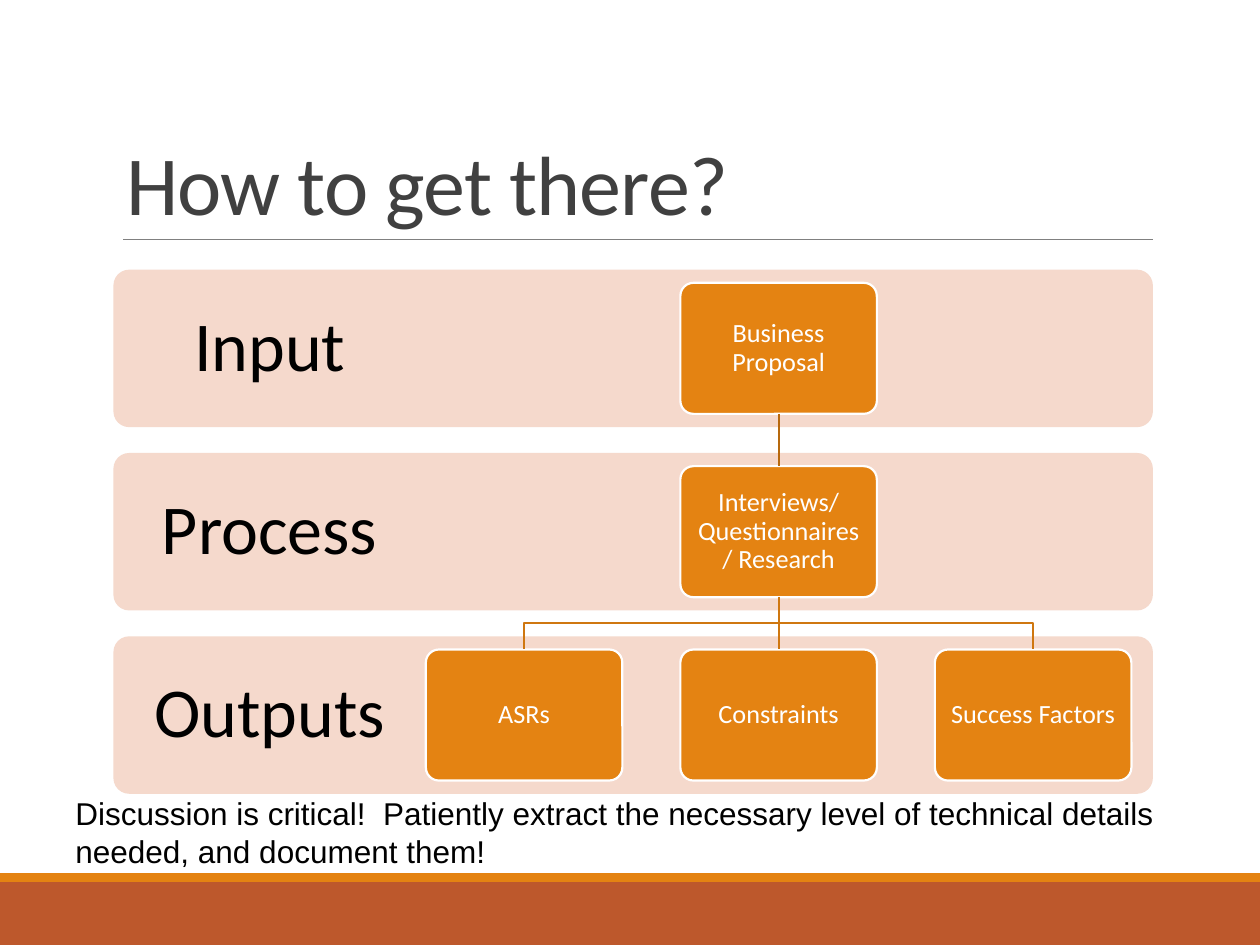
from lxml.etree import SubElement
from pptx import Presentation
from pptx.dml.color import RGBColor
from pptx.enum.shapes import MSO_CONNECTOR, MSO_SHAPE
from pptx.enum.text import MSO_ANCHOR, MSO_AUTO_SIZE, PP_ALIGN
from pptx.oxml.ns import qn
from pptx.util import Inches, Pt

THEME = {
    "rust": "BD582C", "orange": "E48312", "rule": "808080", "band": "F5D9CC",
    "white": "FFFFFF", "upper_link": "B7690E", "lower_link": "CF7710",
    "link_width": 1.25, "rule_width": 0.5,
    "title": {"size": 48, "name": "Calibri", "color": "404040"},
    "label": {"size": 40, "name": "Calibri", "color": "000000"},
    "node": {"size": 15, "name": "Calibri", "color": "FFFFFF"},
    "remark": {"size": 18, "name": "Arial", "color": "000000"},
}


def write(shape, text, look, inset, anchor, align, spacing):
    frame = shape.text_frame
    frame.text = text
    frame_format = {"word_wrap": True, "auto_size": MSO_AUTO_SIZE.NONE, "vertical_anchor": anchor}
    for side in ("left", "right", "top", "bottom"):
        frame_format["margin_" + side] = Inches(inset if side in ("left", "right") else min(inset, 0.05))
    for name, value in frame_format.items():
        setattr(frame, name, value)
    paragraph = frame.paragraphs[0]
    for name, value in {"alignment": align, "line_spacing": spacing}.items():
        setattr(paragraph, name, value)
    font = paragraph.runs[0].font
    for name, value in {"size": Pt(look["size"]), "name": look["name"]}.items():
        setattr(font, name, value)
    font.color.rgb = RGBColor.from_string(look["color"])


def paint(shape, fill=None, line=None, width=THEME["link_width"]):
    shape.shadow.inherit = False
    if fill:
        shape.fill.solid()
        shape.fill.fore_color.rgb = RGBColor.from_string(fill)
    else:
        shape.fill.background()
    if line:
        shape.line.color.rgb = RGBColor.from_string(line)
        shape.line.width = Pt(width)
    else:
        shape.line.fill.background()


deck = Presentation()
deck.slide_width, deck.slide_height = Inches(10), Inches(7.5)
slide = deck.slides.add_slide(deck.slide_layouts[5])
shapes = slide.shapes

left, band_width, band_height = 0.9, 8.25, 1.25
first_row, row_pitch = 2.14, (5.05 - 2.14) / 2
first_column, column_pitch = 3.38, 2.02
node_width, node_height = 1.56, 1.04
node_gap = (band_height - node_height) / 2

for top, height, color in ((7, 0.5, "rust"), (6.93, 0.07, "orange")):
    stripe = shapes.add_shape(MSO_SHAPE.RECTANGLE, 0, Inches(top), deck.slide_width, Inches(height))
    paint(stripe, THEME[color])

heading = shapes.title
for name, value in {"left": left, "top": 0.31, "width": band_width, "height": 1.59}.items():
    setattr(heading, name, Inches(value))
write(heading, "How to get there?", THEME["title"], 0.1, MSO_ANCHOR.BOTTOM, PP_ALIGN.LEFT, 0.85)
heading.text_frame.paragraphs[0].runs[0].font._element.set("spc", "-50")

stages = [
    ("Input", {1: "Business Proposal"}),
    ("Process", {1: "Interviews/ Questionnaires/ Research"}),
    ("Outputs", {0: "ASRs", 1: "Constraints", 2: "Success Factors"}),
]
nodes = {}
for row, (stage, steps) in enumerate(stages):
    top = first_row + row * row_pitch
    band = shapes.add_shape(MSO_SHAPE.ROUNDED_RECTANGLE, Inches(left), Inches(top),
                            Inches(band_width), Inches(band_height))
    band.adjustments[0] = 0.1
    paint(band, THEME["band"])
    label = shapes.add_textbox(Inches(left), Inches(top), Inches(first_column - left), Inches(band_height))
    write(label, stage, THEME["label"], 0.31, MSO_ANCHOR.MIDDLE, PP_ALIGN.CENTER, 0.9)
    for column, step in steps.items():
        node = shapes.add_shape(MSO_SHAPE.ROUNDED_RECTANGLE,
                                Inches(first_column + column * column_pitch), Inches(top + node_gap),
                                Inches(node_width), Inches(node_height))
        node.adjustments[0] = 0.1
        paint(node, THEME["orange"], THEME["white"])
        write(node, step, THEME["node"], 0.09, MSO_ANCHOR.MIDDLE, PP_ALIGN.CENTER, 0.9)
        nodes[row, column] = node

process = nodes[1, 1]
process_x, process_bottom = process.left + process.width // 2, process.top + process.height
for column in (0, 2):
    output = nodes[2, column]
    output_x = output.left + output.width // 2
    bend_y = (process_bottom + output.top) // 2
    branch = shapes.build_freeform(process_x, process_bottom)
    branch.add_line_segments([(process_x, bend_y), (output_x, bend_y), (output_x, output.top)], close=False)
    paint(branch.convert_to_shape(), line=THEME["lower_link"])

rule = shapes.add_connector(MSO_CONNECTOR.STRAIGHT, Inches(0.98), Inches(1.9), Inches(9.15), Inches(1.9))
lines = [(rule, "rule", THEME["rule_width"])]
for row, color in enumerate(("upper_link", "lower_link")):
    link = shapes.add_connector(MSO_CONNECTOR.STRAIGHT, 0, 0, 0, 0)
    link.begin_connect(nodes[row, 1], 2)
    link.end_connect(nodes[row + 1, 1], 0)
    lines.append((link, color, THEME["link_width"]))
for connector, color, width in lines:
    connector.line.color.rgb = RGBColor.from_string(THEME[color])
    connector.line.width = Pt(width)
    SubElement(connector._element.spPr, qn("a:effectLst"))

remark = shapes.add_textbox(Inches(0.5), Inches(6.25), Inches(9.25), Inches(0.71))
write(remark, "Discussion is critical!  Patiently extract the necessary level of technical details needed, "
      "and document them!", THEME["remark"], 0.1, MSO_ANCHOR.TOP, PP_ALIGN.LEFT, 1.0)

deck.save("out.pptx")
